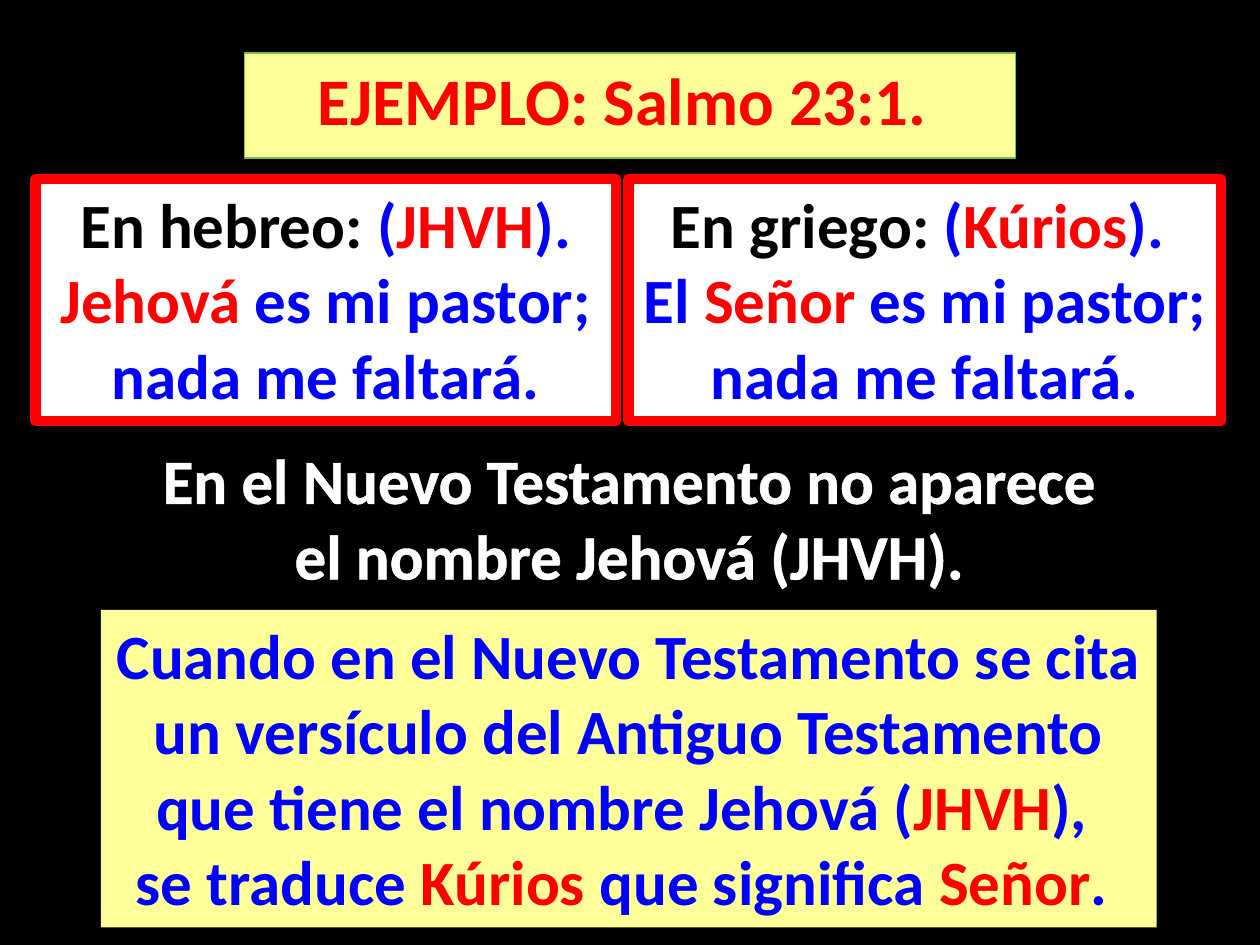
from dataclasses import dataclass
from typing import Optional

from lxml import etree
from pptx import Presentation, util as u
from pptx.dml.color import RGBColor
from pptx.enum import shapes, text
from pptx.oxml import ns

COLORS = {
    "black": "000000",
    "white": "FFFFFF",
    "yellow": "FFFF99",
    "red": "FF0000",
    "blue": "0000FF",
    "green": "81BB42",
}
COLUMNS, ROWS = 100, 75
BODY_SIZE = 36

Run = tuple[str, str]


@dataclass
class Panel:
    """Place in grid columns and rows; each paragraph is a list of (text, color) runs."""
    left: float
    top: float
    width: float
    height: float
    paragraphs: list[list[Run]]
    fill: Optional[str] = None
    line: Optional[str] = None
    line_width: float = 0
    size: float = BODY_SIZE


VERSE_TOP, VERSE_HEIGHT = 14.2, 19.2
VERSE_FRAME = {"fill": "white", "line": "red", "line_width": 6}
VERSE_END = ("es mi pastor; nada me faltará.", "blue")

TITLE = Panel(19.4, 4.2, 61.2, 7.4, [[("EJEMPLO: Salmo 23:1. ", "red")]],
              "yellow", "green", 0.75, 38)
PANELS = [
    Panel(2.8, VERSE_TOP, 46.1, VERSE_HEIGHT, [
        [("En hebreo: ", "black"), ("(", "blue"), ("JHVH", "red"), ("). ", "blue"),
         ("Jehová ", "red"), VERSE_END],
    ], **VERSE_FRAME),
    Panel(49.9, VERSE_TOP, 47, VERSE_HEIGHT, [
        [("En griego: ", "black"), ("(", "blue"), ("Kúrios", "red"), ("). ", "blue")],
        [("El ", "blue"), ("Señor ", "red"), VERSE_END],
    ], **VERSE_FRAME),
    Panel(11.9, 34.5, 76.1, 13.1, [
        [("En el Nuevo Testamento no aparece el nombre Jehová (JHVH).", "white")],
    ]),
    Panel(8, 48.4, 83.8, 25.2, [
        [("Cuando en el Nuevo Testamento se cita un versículo del Antiguo Testamento "
          "que tiene el nombre Jehová (", "blue"), ("JHVH", "red"), ("), ", "blue")],
        [("se traduce ", "blue"), ("Kúrios ", "red"), ("que significa ", "blue"),
         ("Señor", "red"), (". ", "blue")],
    ], "yellow"),
]


def rgb(name: str) -> RGBColor:
    return RGBColor.from_string(COLORS[name])


def set_all(target, values: dict) -> None:
    for name, value in values.items():
        setattr(target, name, value)


def outline_run(run, color: str) -> None:
    """Draw the letter edges in the colour of the letters."""
    line = etree.Element(ns.qn("a:ln"), w=str(u.Pt(0.75)))
    fill = etree.SubElement(line, ns.qn("a:solidFill"))
    etree.SubElement(fill, ns.qn("a:srgbClr"), val=COLORS[color])
    run.font._element.insert(0, line)


def write_text(frame, panel: Panel) -> None:
    set_all(frame, {"word_wrap": True,
                    "vertical_anchor": text.MSO_ANCHOR.TOP,
                    "auto_size": text.MSO_AUTO_SIZE.SHAPE_TO_FIT_TEXT})
    for index, runs in enumerate(panel.paragraphs):
        paragraph = frame.add_paragraph() if index else frame.paragraphs[0]
        paragraph.alignment = text.PP_ALIGN.CENTER
        for words, color in runs:
            run = paragraph.add_run()
            run.text = words
            set_all(run.font, {"name": "Calibri", "size": u.Pt(panel.size), "bold": True})
            run.font.color.rgb = rgb(color)
            outline_run(run, color)


def format_panel(shape, panel: Panel) -> None:
    if panel.fill:
        shape.fill.solid()
        shape.fill.fore_color.rgb = rgb(panel.fill)
    if panel.line:
        shape.line.color.rgb = rgb(panel.line)
        shape.line.width = u.Pt(panel.line_width)
    else:
        shape.line.fill.background()
    write_text(shape.text_frame, panel)


def place(panel: Panel, presentation) -> dict[str, int]:
    column = presentation.slide_width / COLUMNS
    row = presentation.slide_height / ROWS
    return {"left": round(panel.left * column), "top": round(panel.top * row),
            "width": round(panel.width * column), "height": round(panel.height * row)}


def add_panel(slide, panel: Panel, position: dict[str, int]) -> None:
    if panel.fill:
        shape = slide.shapes.add_shape(shapes.MSO_SHAPE.RECTANGLE, **position)
        shape.shadow.inherit = False
    else:
        shape = slide.shapes.add_textbox(**position)
    format_panel(shape, panel)


def main() -> None:
    presentation = Presentation()
    set_all(presentation, {"slide_width": u.Inches(10), "slide_height": u.Inches(7.5)})
    slide = presentation.slides.add_slide(presentation.slide_layouts.get_by_name("Title Only"))
    slide.background.fill.solid()
    slide.background.fill.fore_color.rgb = rgb("black")

    title = slide.shapes.title
    set_all(title, place(TITLE, presentation))
    format_panel(title, TITLE)
    for panel in PANELS:
        add_panel(slide, panel, place(panel, presentation))
    presentation.save("out.pptx")


if __name__ == "__main__":
    main()
